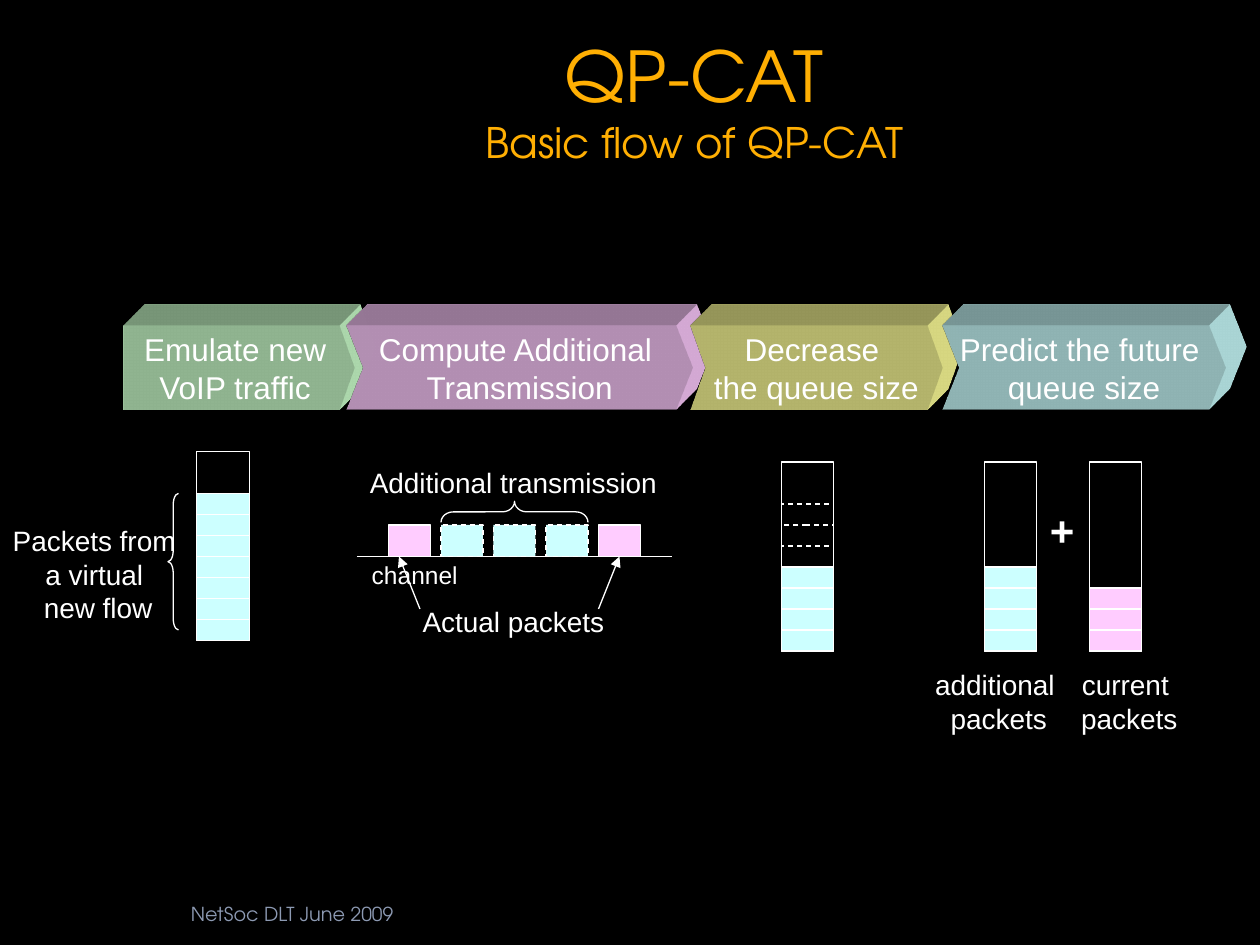
import pptx
import pptx.util
import pptx.dml.color
import pptx.enum.dml
import pptx.enum.shapes
import pptx.enum.text
import pptx.oxml

HUES = {"back": "000000", "ink": "FFFFFF", "title": "FFAF03", "foot": "8D9AB3",
        "mint": "CCFFCC", "pink": "FFCCFF", "sand": "FFFF99", "aqua": "CCFFFF"}
KIND = pptx.enum.shapes.MSO_SHAPE
ALIGN = pptx.enum.text.PP_ALIGN
ANCHOR = pptx.enum.text.MSO_ANCHOR
UNIT = pptx.util.Inches(1) / 12
NS = 'xmlns:a="http://schemas.openxmlformats.org/drawingml/2006/main"'


def grid(*cells):
    """Turn grid cells of a twelfth of an inch into lengths."""
    return [pptx.util.Emu(round(c * UNIT)) for c in cells]


def hue(name):
    """Look up a colour by name."""
    return pptx.dml.color.RGBColor.from_string(HUES[name])


def add_xml(parent, text):
    """Append a DrawingML element to a parent."""
    parent.append(pptx.oxml.parse_xml(text))


def style(font, size, name="ink", face="Arial", bold=False):
    """Set size, colour and face of a font."""
    font.size = pptx.util.Pt(size)
    font.name = face
    font.bold = bold
    font.color.rgb = hue(name)


def write(shape, lines, size, bold=False):
    """Fill a shape with centred lines that do not wrap."""
    frame = shape.text_frame
    frame.word_wrap = False
    frame.text = "\n".join(lines)
    for para in frame.paragraphs:
        para.alignment = ALIGN.CENTER
        style(para.font, size, bold=bold)


def label(slide, box, lines, size=16, bold=False):
    """Add a centred caption in a box."""
    write(slide.shapes.add_textbox(*grid(*box)), lines, size, bold)


def outline(line, dash=False):
    """Draw a thin white line, dashed on request."""
    line.color.rgb = hue("ink")
    line.width = pptx.util.Pt(0.75)
    if dash:
        line.dash_style = pptx.enum.dml.MSO_LINE.DASH


def block(slide, box, fill=None, dash=False, kind=KIND.RECTANGLE):
    """Add an outlined shape, filled or hollow."""
    shape = slide.shapes.add_shape(kind, *grid(*box))
    shape.shadow.inherit = False
    if fill:
        shape.fill.solid()
        shape.fill.fore_color.rgb = hue(fill)
    else:
        shape.fill.background()
    outline(shape.line, dash)
    return shape


def brace(slide, box, bend, turn=0):
    """Add a curly brace."""
    shape = block(slide, box, kind=KIND.LEFT_BRACE)
    shape.adjustments[0] = bend
    shape.rotation = turn


def link(slide, ends, arrow=False):
    """Add a straight line, with an arrowhead on request."""
    line = slide.shapes.add_connector(
        pptx.enum.shapes.MSO_CONNECTOR.STRAIGHT, *grid(*ends))
    outline(line.line)
    props = line._element.spPr
    if arrow:
        add_xml(props.find(pptx.oxml.ns.qn("a:ln")),
                f'<a:tailEnd {NS} type="triangle"/>')
    add_xml(props, f"<a:effectLst {NS}/>")


def banner(slide, box, kind, bend, fill, lines):
    """Add a raised step arrow with its heading."""
    shape = block(slide, box, fill, kind=kind)
    shape.line.fill.background()
    shape.adjustments[0] = bend
    shape.text_frame.vertical_anchor = ANCHOR.MIDDLE
    write(shape, lines, 18)
    props = shape._element.spPr
    add_xml(props, f'<a:scene3d {NS}><a:camera prst="legacyObliqueTopRight"/>'
                   '<a:lightRig rig="legacyFlat3" dir="b"/></a:scene3d>')
    add_xml(props, f'<a:sp3d {NS} extrusionH="430200" prstMaterial="legacyMatte">'
                   f'<a:extrusionClr><a:srgbClr val="{HUES[fill]}"/>'
                   '</a:extrusionClr></a:sp3d>')


def stack(slide, x, y, count, fill, gaps=()):
    """Draw a queue of nine rows, filled from the bottom up."""
    block(slide, (x, y, 5, 18))
    for row in range(count):
        block(slide, (x, y + 16 - 2 * row, 5, 2), fill)
    for row in gaps:
        block(slide, (x, y + 16 - 2 * row, 5, 2), dash=True)


def emulate(slide, x, y):
    """Draw the step that emulates a new flow."""
    banner(slide, (x, y, 22, 8), KIND.PENTAGON, 0.18, "mint",
           ["Emulate new", "VoIP traffic"])
    stack(slide, x + 7, y + 12, 7, "aqua")
    brace(slide, (x + 4.25, y + 16, 1, 13), 1.08)
    label(slide, (x - 11.75, y + 18.3, 18.7, 10.8),
          ["Packets from ", "a virtual ", "new flow"])


def compute(slide, x, y):
    """Draw the step that computes extra transmission."""
    banner(slide, (x, y, 33, 8), KIND.CHEVRON, 0.2, "pink",
           ["Compute Additional ", "Transmission"])
    link(slide, (x + 1, y + 22, x + 31, y + 22))
    for slot in range(5):
        extra = 0 < slot < 4
        block(slide, (x + 4 + 5 * slot, y + 19, 4, 3),
              "aqua" if extra else "pink", extra)
    label(slide, (x + 1.2, y + 21.7, 10.6, 4), ["channel"], 14)
    label(slide, (x + 6, y + 26, 19.8, 4.4), ["Actual packets"])
    for start, end in ((7, 5), (24, 26)):
        link(slide, (x + start, y + 27, x + end, y + 22), True)
    label(slide, (x + 1, y + 12.7, 29.8, 4.4), ["Additional transmission"])
    brace(slide, (x + 15, y + 10.75, 2, 14), 0.58, 90)


def decrease(slide, x, y):
    """Draw the step that shortens the queue."""
    banner(slide, (x, y, 24, 8), KIND.CHEVRON, 0.18, "sand",
           ["Decrease ", "the queue size"])
    stack(slide, x + 8.65, y + 13, 4, "aqua", (4, 6))


def predict(slide, x, y):
    """Draw the step that predicts the queue."""
    banner(slide, (x, y, 27, 8), KIND.CHEVRON, 0.2, "aqua",
           ["Predict the future ", "queue size"])
    stack(slide, x + 4, y + 13, 4, "aqua")
    stack(slide, x + 14, y + 13, 3, "pink")
    label(slide, (x + 9, y + 16.5, 4.8, 6), ["+"], 24, True)
    label(slide, (x - 1.9, y + 32, 13.8, 7.7), ["additional", " packets"])
    label(slide, (x + 12, y + 32, 11.6, 7.7), ["current ", "packets"])


def head(slide, box):
    """Write the title and its second line."""
    title = slide.shapes.title
    title.left, title.top, title.width, title.height = grid(*box)
    frame = title.text_frame
    frame.vertical_anchor = ANCHOR.MIDDLE
    para = frame.paragraphs[0]
    para.alignment = ALIGN.CENTER
    for text, size in (("QP-CAT", 40), ("Basic flow of QP-CAT", 24)):
        if para.runs:
            para.add_line_break()
        run = para.add_run()
        run.text = text
        style(run.font, size, "title", "TeX Gyre Adventor")


def foot(slide, box):
    """Write the footer."""
    frame = slide.shapes.add_textbox(*grid(*box)).text_frame
    frame.word_wrap = True
    frame.vertical_anchor = ANCHOR.MIDDLE
    frame.text = "NetSoc DLT June 2009"
    style(frame.paragraphs[0].font, 11, "foot", "TeX Gyre Adventor")


def main():
    """Build the slide and save it."""
    deck = pptx.Presentation()
    deck.slide_width, deck.slide_height = grid(120, 90)
    slide = deck.slides.add_slide(deck.slide_layouts[5])
    slide.background.fill.solid()
    slide.background.fill.fore_color.rgb = hue("back")
    head(slide, (15, 2, 102.25, 15))
    foot(slide, (17, 84, 25, 6))
    steps = ((emulate, 11.75), (compute, 33), (decrease, 65.75), (predict, 89.75))
    for draw, left in steps:
        draw(slide, left, 31)
    deck.save("out.pptx")


if __name__ == "__main__":
    main()
